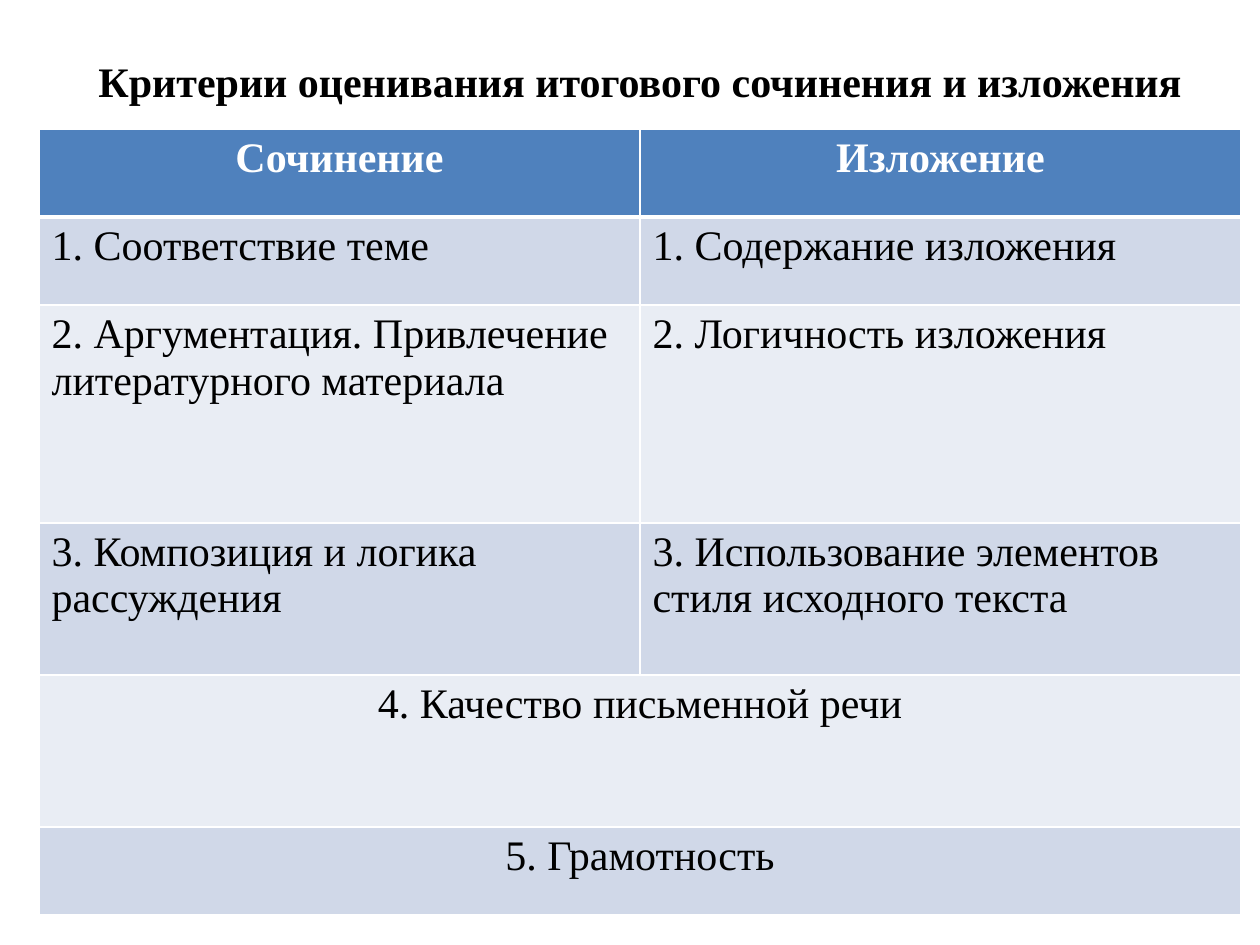
from dataclasses import dataclass

from lxml import etree
from pptx import Presentation, util as u
from pptx.dml import color
from pptx.enum import text
from pptx.oxml import ns

PX_PER_INCH = 126


@dataclass(frozen=True)
class Theme:
    font: str = "Times New Roman"
    size: int = 24
    ink: str = "000000"
    paper: str = "FFFFFF"
    header: str = "4F81BD"
    bands: tuple = ("D0D8E8", "E9EDF4")
    rule: int = 1
    header_rule: int = 3


THEME = Theme()

TITLE = "Критерии оценивания итогового сочинения и изложения"
CRITERIA = [
    ("Сочинение", "Изложение"),
    ("1. Соответствие теме", "1. Содержание изложения"),
    ("2. Аргументация. Привлечение литературного материала",
     "2. Логичность изложения"),
    ("3. Композиция и логика рассуждения",
     "3. Использование элементов стиля исходного текста"),
    ("4. Качество письменной речи",),
    ("5. Грамотность",),
]
ROW_HEIGHTS = [88, 88, 218, 152, 152, 88]


def px(length):
    return u.Emu(round(length * u.Inches(1) / PX_PER_INCH))


def write(frame, words, ink, bold=False, centred=False):
    frame.text = words
    para = frame.paragraphs[0]
    para.alignment = text.PP_ALIGN.CENTER if centred else text.PP_ALIGN.LEFT
    font = para.runs[0].font
    font.name = THEME.font
    font.size = u.Pt(THEME.size)
    font.bold = bold
    font.color.rgb = color.RGBColor.from_string(ink)


def set_borders(cell, top, bottom):
    properties = cell._tc.get_or_add_tcPr()
    widths = {"L": THEME.rule, "R": THEME.rule, "T": top, "B": bottom}
    for side, width in widths.items():
        line = etree.SubElement(properties, ns.qn(f"a:ln{side}"), w=str(u.Pt(width)))
        fill = etree.SubElement(line, ns.qn("a:solidFill"))
        etree.SubElement(fill, ns.qn("a:srgbClr"), val=THEME.paper)


def add_title(page, left, top, width, height):
    box = page.shapes.add_textbox(px(left), px(top), px(width), px(height))
    box.text_frame.word_wrap = True
    write(box.text_frame, TITLE, THEME.ink, bold=True, centred=True)


def add_criteria_table(page, left, top, width):
    columns = len(CRITERIA[0])
    table = page.shapes.add_table(
        len(CRITERIA), columns, px(left), px(top), px(width), px(sum(ROW_HEIGHTS))
    ).table
    for column in table.columns:
        column.width = px(width / columns)
    for index, (words, height) in enumerate(zip(CRITERIA, ROW_HEIGHTS)):
        table.rows[index].height = px(height)
        is_header = index == 0
        is_merged = len(words) < columns
        shade = THEME.header if is_header else THEME.bands[(index - 1) % 2]
        upper = THEME.header_rule if index == 1 else THEME.rule
        lower = THEME.header_rule if is_header else THEME.rule
        if is_merged:
            table.cell(index, 0).merge(table.cell(index, columns - 1))
        for position in range(columns):
            cell = table.cell(index, position)
            set_borders(cell, upper, lower)
            cell.fill.solid()
            cell.fill.fore_color.rgb = color.RGBColor.from_string(shade)
        for position, entry in enumerate(words):
            write(table.cell(index, position).text_frame, entry,
                  THEME.paper if is_header else THEME.ink,
                  bold=is_header, centred=is_header or is_merged)


def main():
    deck = Presentation()
    deck.slide_width, deck.slide_height = px(1260), px(945)
    page = deck.slides.add_slide(deck.slide_layouts[6])
    add_title(page, 49, 49, 1182, 63)
    add_criteria_table(page, 39, 129, 1202)
    deck.save("out.pptx")


if __name__ == "__main__":
    main()
